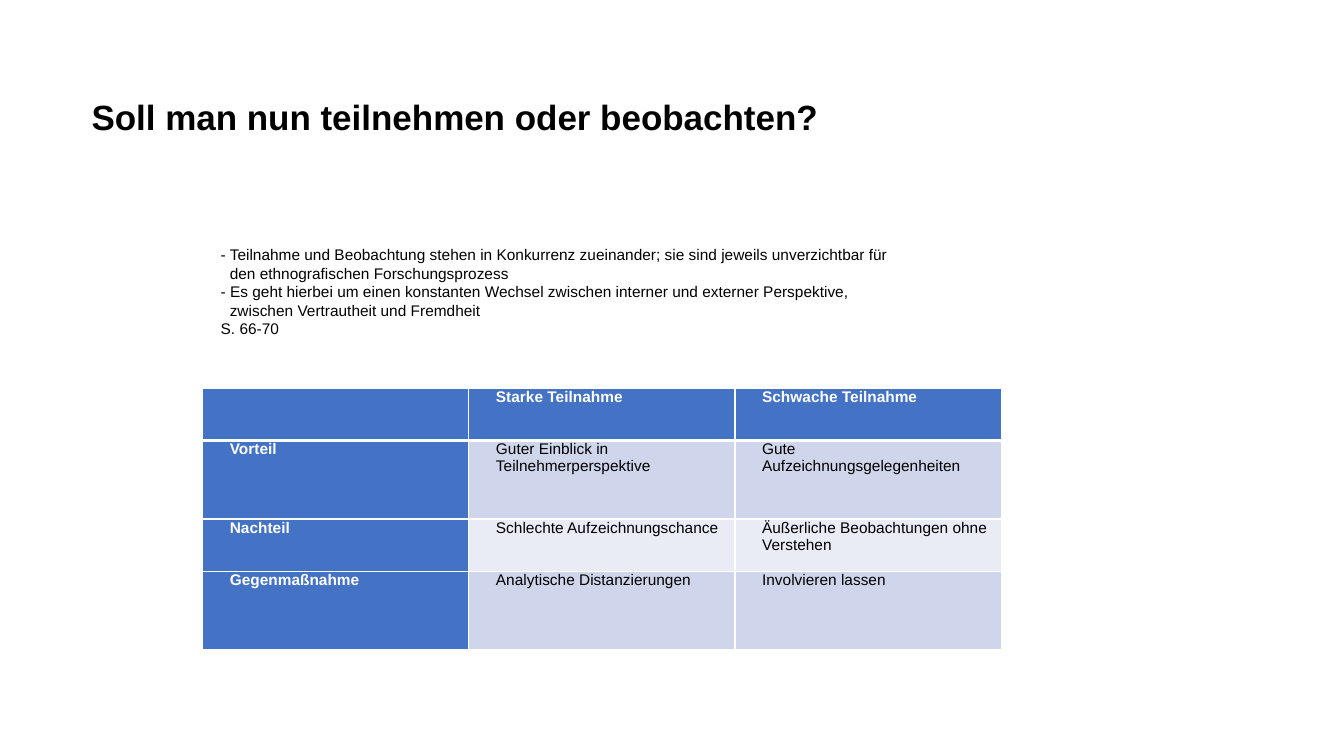
from lxml import etree
from pptx import Presentation
from pptx import util as u
from pptx.dml.color import RGBColor
from pptx.enum import text
from pptx.oxml.ns import qn

FONT = "Arial"
COLORS = {"text": "000000", "light": "FFFFFF", "head": "4472C4",
          "odd": "CFD5EA", "even": "E9EBF5"}
WIDTH, HEIGHT = u.Inches(13.33), u.Inches(7.5)
ROW_UNIT = 0.26  # inches; table rows are two or three units tall
ROW_UNITS = (2, 3, 2, 3)

TITLE = "Soll man nun teilnehmen oder beobachten?"
# (line, continues the point above)
NOTES = [
    ("- Teilnahme und Beobachtung stehen in Konkurrenz zueinander; "
     "sie sind jeweils unverzichtbar für", False),
    ("den ethnografischen Forschungsprozess", True),
    ("- Es geht hierbei um einen konstanten Wechsel zwischen interner "
     "und externer Perspektive,", False),
    ("zwischen Vertrautheit und Fremdheit", True),
    ("S. 66-70", False),
]
COMPARISON = [
    ("", "Starke Teilnahme", "Schwache Teilnahme"),
    ("Vorteil", "Guter Einblick in Teilnehmerperspektive",
     "Gute Aufzeichnungsgelegenheiten"),
    ("Nachteil", "Schlechte Aufzeichnungschance",
     "Äußerliche Beobachtungen ohne Verstehen"),
    ("Gegenmaßnahme", "Analytische Distanzierungen", "Involvieren lassen"),
]


def rgb(name):
    return RGBColor.from_string(COLORS[name])


def style(p, size, color="text", bold=False, indent=0):
    p.font.size = u.Pt(size)
    for r in p.runs:
        r.font.name, r.font.size, r.font.bold = FONT, u.Pt(size), bold
        r.font.color.rgb = rgb(color)
    if indent:
        p._p.get_or_add_pPr().set("marL", str(u.Inches(indent)))


def add_text(slide, left, top, width, height):
    """Add a middle-anchored text box, placed in inches."""
    box = slide.shapes.add_textbox(*map(u.Inches, (left, top, width, height)))
    tf = box.text_frame
    tf.word_wrap = True
    tf.vertical_anchor = text.MSO_ANCHOR.MIDDLE
    return tf


def add_title(slide):
    tf = add_text(slide, 0.81, 0.64, 11.5, 1.45)
    tf.margin_bottom = u.Inches(0.41)
    tf.text = TITLE
    tf.paragraphs[0].line_spacing = 0.9
    style(tf.paragraphs[0], 25, bold=True)


def add_notes(slide):
    tf = add_text(slide, 2.09, 2.38, 6.92, 1.03)
    tf.text = "\n".join(line for line, _ in NOTES)
    for p, (_, continues) in zip(tf.paragraphs, NOTES):
        style(p, 11, indent=0.09 if continues else 0)


def set_borders(cell, bottom):
    tcPr = cell._tc.get_or_add_tcPr()
    widths = {"a:lnL": 1, "a:lnR": 1, "a:lnT": 1, "a:lnB": bottom}
    for i, (tag, width) in enumerate(widths.items()):
        ln = etree.Element(qn(tag), w=str(u.Pt(width)))
        fill = etree.SubElement(ln, qn("a:solidFill"))
        etree.SubElement(fill, qn("a:srgbClr"), val=COLORS["light"])
        tcPr.insert(i, ln)


def fill_cell(cell, words, row, col):
    head = row == 0 or col == 0
    cell.fill.solid()
    cell.fill.fore_color.rgb = rgb("head" if head else "odd" if row % 2 else "even")
    cell.margin_left = cell.margin_right = u.Inches(0.07)
    cell.margin_top = cell.margin_bottom = 0
    cell.text = words
    style(cell.text_frame.paragraphs[0], 11, "light" if head else "text", head, 0.2)
    set_borders(cell, bottom=3 if row == 0 else 1)


def add_comparison(slide):
    frame = slide.shapes.add_table(
        len(COMPARISON), len(COMPARISON[0]), u.Inches(2.01), u.Inches(3.85),
        u.Inches(7.92), u.Inches(ROW_UNIT * sum(ROW_UNITS)))
    table = frame.table
    for row, units in zip(table.rows, ROW_UNITS):
        row.height = u.Inches(ROW_UNIT * units)
    for i, line in enumerate(COMPARISON):
        for j, words in enumerate(line):
            fill_cell(table.cell(i, j), words, i, j)


def main():
    prs = Presentation()
    prs.slide_width, prs.slide_height = WIDTH, HEIGHT
    slide = prs.slides.add_slide(prs.slide_layouts[6])
    add_title(slide)
    add_comparison(slide)
    add_notes(slide)
    prs.save("out.pptx")


if __name__ == "__main__":
    main()
